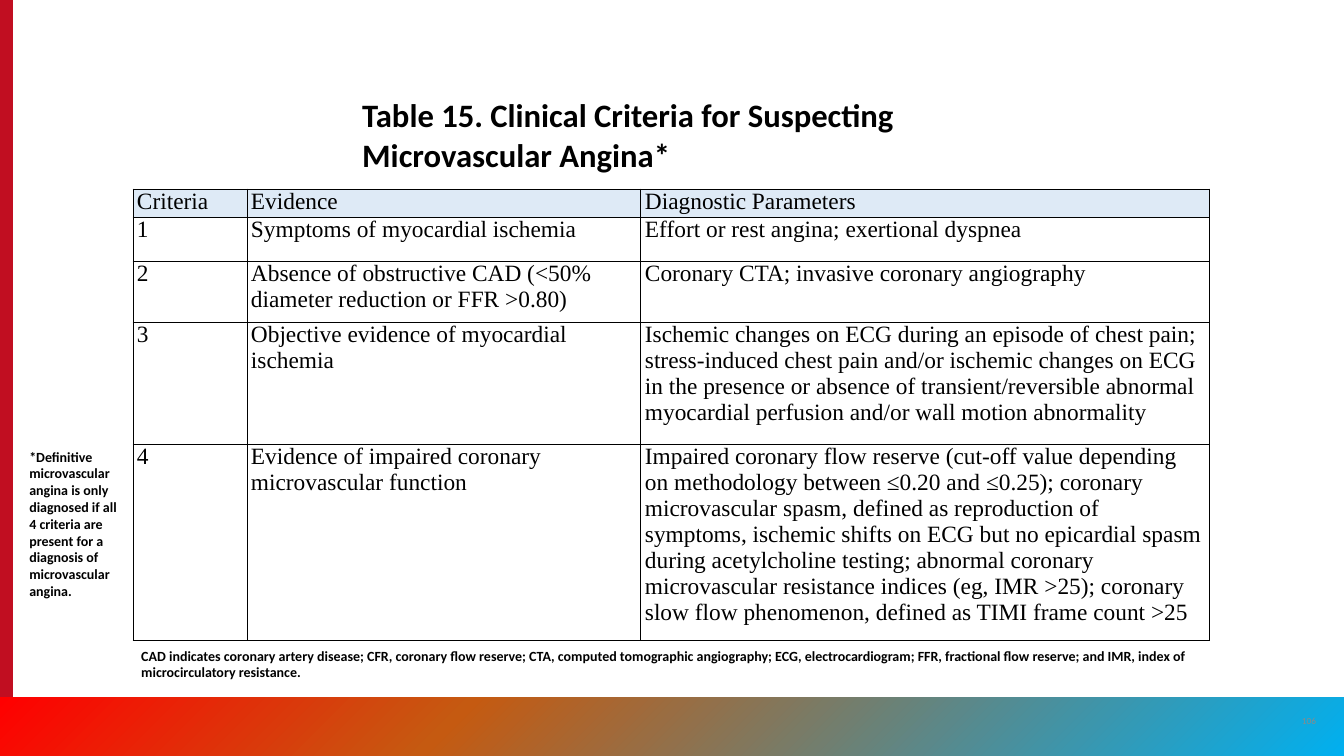
from copy import deepcopy
from lxml.etree import SubElement as Sub
from pptx import Presentation
from pptx.dml.color import RGBColor as RGB
from pptx.enum.shapes import MSO_SHAPE as Shape
from pptx.enum.text import MSO_ANCHOR as Anchor, PP_ALIGN as Align
from pptx.oxml.ns import qn
from pptx.util import Pt

TITLE = "Table 15. Clinical Criteria for Suspecting Microvascular Angina*"
NOTE = ("*Definitive microvascular angina is only diagnosed if all 4 criteria "
        "are present for a diagnosis of microvascular angina.")
KEY = ("CAD indicates coronary artery disease; CFR, coronary flow reserve; "
       "CTA, computed tomographic angiography; ECG, electrocardiogram; "
       "FFR, fractional flow reserve; and IMR, index of microcirculatory "
       "resistance.")
PAGE = "106"
ROWS = [
    ("Criteria", "Evidence", "Diagnostic Parameters"),
    ("1", "Symptoms of myocardial ischemia",
     "Effort or rest angina; exertional dyspnea"),
    ("2", "Absence of obstructive CAD (<50% diameter reduction or FFR >0.80)",
     "Coronary CTA; invasive coronary angiography"),
    ("3", "Objective evidence of myocardial ischemia",
     "Ischemic changes on ECG during an episode of chest pain; "
     "stress-induced chest pain and/or ischemic changes on ECG in the "
     "presence or absence of transient/reversible abnormal myocardial "
     "perfusion and/or wall motion abnormality"),
    ("4", "Evidence of impaired coronary microvascular function",
     "Impaired coronary flow reserve (cut-off value depending on methodology "
     "between ≤0.20 and ≤0.25); coronary microvascular spasm, defined as "
     "reproduction of symptoms, ischemic shifts on ECG but no epicardial "
     "spasm during acetylcholine testing; abnormal coronary microvascular "
     "resistance indices (eg, IMR >25); coronary slow flow phenomenon, "
     "defined as TIMI frame count >25"),
]
WIDTHS = (114, 394, 569)
HEIGHTS = (27, 44, 61, 122, 186)

BLACK = RGB(0x00, 0x00, 0x00)
GRAY = RGB(0x8A, 0x8B, 0x8A)
RED = RGB(0xC1, 0x0E, 0x21)
PALE = RGB(0xDE, 0xEA, 0xF6)
STOPS = [(0, RGB(0x00, 0xB0, 0xF0)), (0.66, RGB(0xC5, 0x5A, 0x11)),
         (1, RGB(0xFF, 0x00, 0x00))]


def px(n):
    return n * 914400 // 84


def box(*spot):
    return [px(n) for n in spot]


def style(para, face, size, color=BLACK, bold=False):
    font = para.font
    font.name, font.size, font.bold = face, Pt(size), bold
    font.color.rgb = color


def block(slide, *spot):
    shape = slide.shapes.add_shape(Shape.RECTANGLE, *box(*spot))
    shape.shadow.inherit = False
    shape.line.fill.background()
    return shape


def label(slide, text, size, *spot, color=BLACK, bold=True):
    frame = slide.shapes.add_textbox(*box(*spot)).text_frame
    frame.word_wrap = True
    frame.text = text
    style(frame.paragraphs[0], "Calibri", size, color, bold)
    return frame


def border(cell):
    props = cell._tc.get_or_add_tcPr()
    for i, side in enumerate(("lnL", "lnR", "lnT", "lnB")):
        line = Sub(props, qn("a:" + side), w=str(Pt(1)))
        Sub(Sub(line, qn("a:solidFill")), qn("a:srgbClr"), val=str(BLACK))
        props.insert(i, line)


def band(slide):
    fill = block(slide, 0, 697, 1344, 59)
    fill.rotation = 180
    fill = fill.fill
    fill.gradient()
    fill.gradient_angle = 315
    stops = fill._xPr.find(".//" + qn("a:gsLst"))
    stops.append(deepcopy(stops[0]))
    for stop, (place, color) in zip(fill.gradient_stops, STOPS):
        stop.position = place
        stop.color.rgb = color


def grid(slide):
    table = slide.shapes.add_table(
        len(ROWS), len(WIDTHS),
        *box(133, 189, sum(WIDTHS), sum(HEIGHTS))).table
    table.first_row = table.horz_banding = False
    for col, wide in zip(table.columns, WIDTHS):
        col.width = px(wide)
    for r, (row, high) in enumerate(zip(ROWS, HEIGHTS)):
        table.rows[r].height = px(high)
        for c, text in enumerate(row):
            cell = table.cell(r, c)
            cell.text = text
            style(cell.text_frame.paragraphs[0], "Times New Roman", 20)
            cell.margin_left = cell.margin_right = px(4)
            cell.margin_top = cell.margin_bottom = 0
            if r:
                cell.fill.background()
            else:
                cell.fill.solid()
                cell.fill.fore_color.rgb = PALE
            border(cell)


def main():
    deck = Presentation()
    deck.slide_width, deck.slide_height = box(1344, 756)
    slide = deck.slides.add_slide(deck.slide_layouts[6])
    bar = block(slide, 0, 0, 13, 756)
    bar.fill.solid()
    bar.fill.fore_color.rgb = RED
    band(slide)
    page = label(slide, PAGE, 8, 1289, 701, 40, 40, color=GRAY, bold=False)
    page.vertical_anchor = Anchor.MIDDLE
    page.paragraphs[0].alignment = Align.CENTER
    label(slide, TITLE, 28, 354, 91, 638, 84)
    grid(slide)
    label(slide, NOTE, 12, 21, 444, 105, 195)
    label(slide, KEY, 12, 133, 643, 1077, 42)
    deck.save("out.pptx")


if __name__ == "__main__":
    main()
